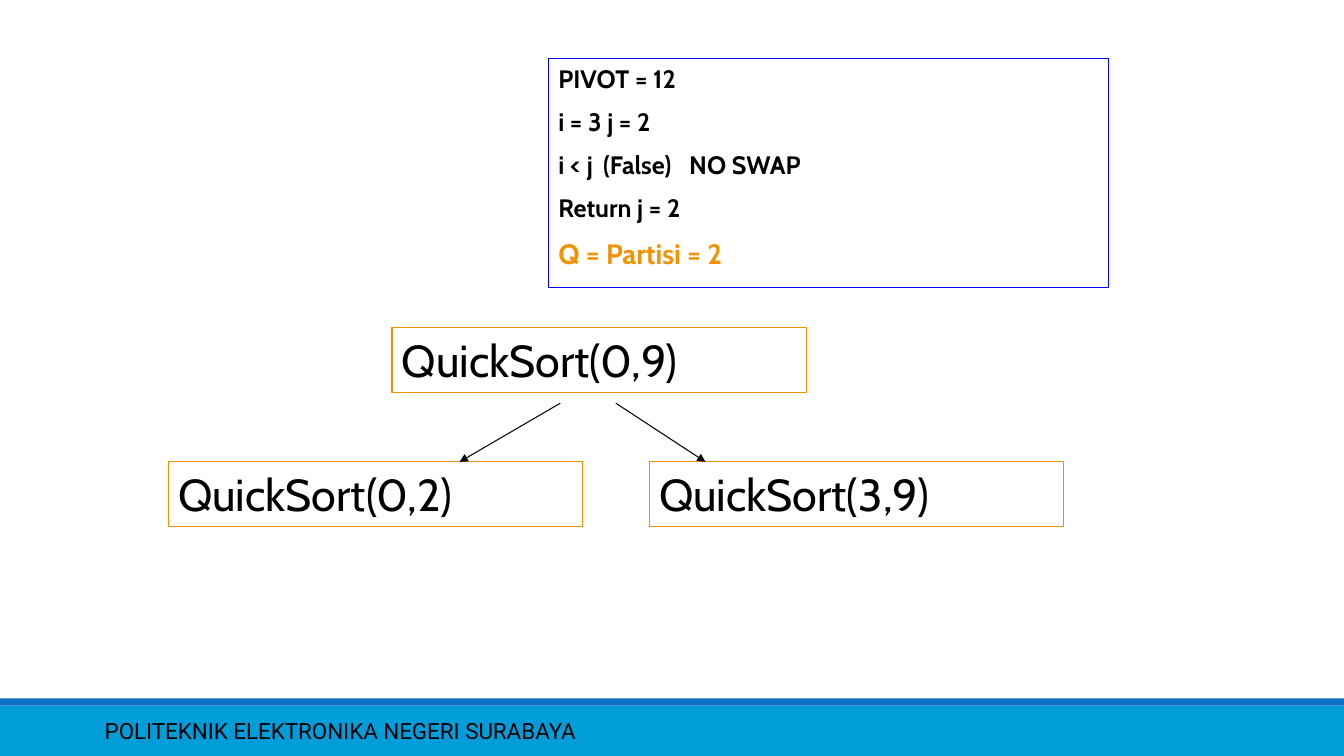
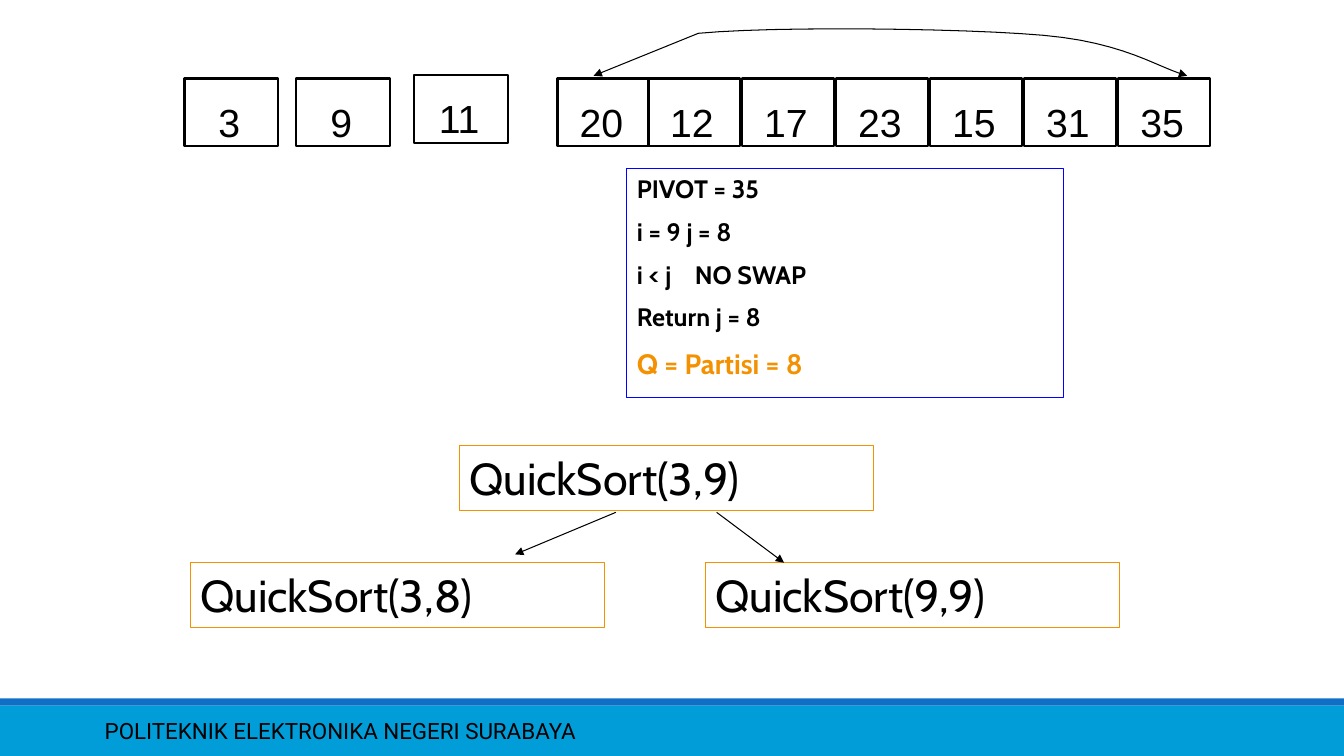
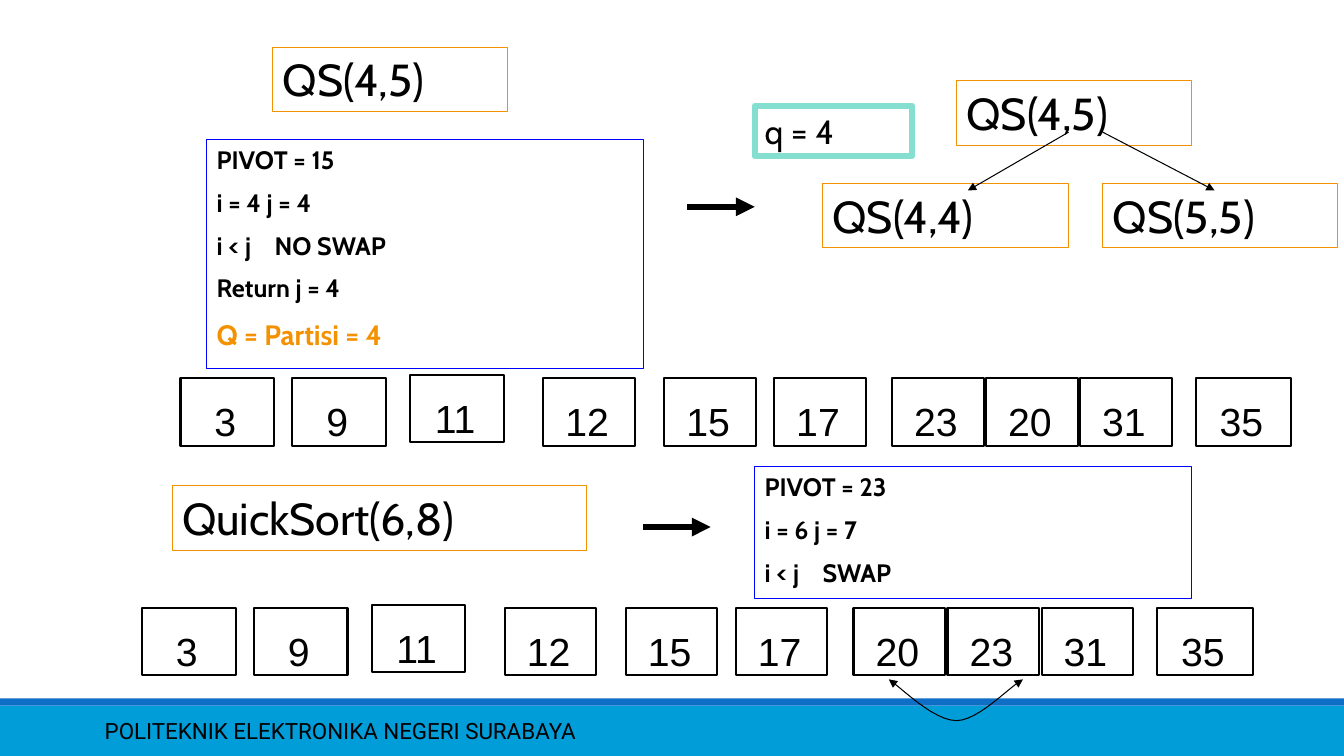
import lxml.etree
import pptx
import pptx.dml.color
import pptx.enum.shapes
import pptx.enum.text
import pptx.oxml.ns
import pptx.util

Cm = pptx.util.Cm
Pt = pptx.util.Pt
RGBColor = pptx.dml.color.RGBColor
Anchor = pptx.enum.text.MSO_ANCHOR
Align = pptx.enum.text.PP_ALIGN
qn = pptx.oxml.ns.qn

BLACK = RGBColor(0x00, 0x00, 0x00)
BLUE = RGBColor(0x00, 0x00, 0xFF)
ORANGE = RGBColor(0xF4, 0x91, 0x00)
MINT = RGBColor(0x85, 0xDF, 0xD0)
BAND = RGBColor(0x00, 0x9D, 0xD9)
BAND_EDGE = RGBColor(0x0F, 0x6F, 0xC6)

SLIDE_WIDTH = 33.87
SLIDE_HEIGHT = 19.05
CALL_WIDTH = 10.44
SHORT_CALL_WIDTH = 5.92
CALL_HEIGHT = 1.63
CELL_PITCH = 2.37
JOINED_OFFSETS = [0, 2.82, 5.79, 9.4] + [11.68 + CELL_PITCH * index for index in range(6)]
SPLIT_OFFSETS = (
    [0, 2.82, 5.79, 9.14, 12.19, 14.96]
    + [17.93 + CELL_PITCH * index for index in range(3)]
    + [25.58]
)
SWAP_TABS = [1.46]
CURVE_STEPS = 12


def add_text(text_frame, text, size=18, font="Cabin", color=BLACK, bold=False,
             align=Align.LEFT, space_before=0, tabs=()):
    first = text_frame.paragraphs[0]
    paragraph = text_frame.add_paragraph() if first.runs else first
    if tabs:
        properties = paragraph._p.get_or_add_pPr()
        tab_list = lxml.etree.SubElement(properties, qn("a:tabLst"))
        for position in tabs:
            lxml.etree.SubElement(tab_list, qn("a:tab"), pos=str(Cm(position)), algn="l")
    paragraph.alignment = align
    paragraph.space_before = Pt(space_before)
    run = paragraph.add_run()
    run.text = text
    run.font.size = Pt(size)
    run.font.name = font
    run.font.bold = bold
    run.font.color.rgb = color


def add_box(slide, left, top, width, height, fill=None, line=None, line_width=0.75,
            anchor=Anchor.TOP):
    shape = slide.shapes.add_shape(
        pptx.enum.shapes.MSO_SHAPE.RECTANGLE, Cm(left), Cm(top), Cm(width), Cm(height))
    shape.shadow.inherit = False
    if fill is None:
        shape.fill.background()
    else:
        shape.fill.solid()
        shape.fill.fore_color.rgb = fill
    if line is None:
        shape.line.fill.background()
    else:
        shape.line.color.rgb = line
        shape.line.width = Pt(line_width)
    shape.text_frame.word_wrap = True
    shape.text_frame.vertical_anchor = anchor
    return shape


def format_arrow(shape, line_width, ends):
    shape.line.color.rgb = BLACK
    shape.line.width = Pt(line_width)
    for end in ends:
        lxml.etree.SubElement(shape.line._get_or_add_ln(), qn(end), type="triangle")


def add_arrow(slide, start_x, start_y, end_x, end_y, line_width=0.75):
    connector = slide.shapes.add_connector(
        pptx.enum.shapes.MSO_CONNECTOR.STRAIGHT,
        Cm(start_x), Cm(start_y), Cm(end_x), Cm(end_y))
    format_arrow(connector, line_width, ["a:tailEnd"])
    lxml.etree.SubElement(connector._element.spPr, qn("a:effectLst"))


def curve_points(start, control_1, control_2, end):
    for step in range(1, CURVE_STEPS + 1):
        t = step / CURVE_STEPS
        weights = ((1 - t) ** 3, 3 * t * (1 - t) ** 2, 3 * t ** 2 * (1 - t), t ** 3)
        knots = (start, control_1, control_2, end)
        yield tuple(sum(w * knot[axis] for w, knot in zip(weights, knots)) for axis in (0, 1))


def add_swap_arrow(slide, left, top, segments):
    points = [(0, 0)]
    for segment in segments:
        points.extend([segment] if len(segment) == 2 else curve_points(points[-1], *segment))
    vertices = [(Cm(left + x), Cm(top + y)) for x, y in points]
    builder = slide.shapes.build_freeform(*vertices[0])
    builder.add_line_segments(vertices[1:], close=False)
    shape = builder.convert_to_shape()
    shape.shadow.inherit = False
    shape.fill.background()
    format_arrow(shape, 0.75, ["a:headEnd", "a:tailEnd"])


def add_call(slide, left, top, text, width=CALL_WIDTH):
    shape = add_box(slide, left, top, width, CALL_HEIGHT, line=ORANGE)
    add_text(shape.text_frame, text, size=32)


def add_call_tree(slide, left, top, calls, arrows):
    for text, x, y, width in calls:
        add_call(slide, left + x, top + y, text, width)
    for start_x, start_y, end_x, end_y in arrows:
        add_arrow(slide, left + start_x, top + start_y, left + end_x, top + end_y)


def add_trace(slide, left, top, steps, result=None, width=11, height=5.77, tabs=SWAP_TABS):
    text_frame = add_box(slide, left, top, width, height, line=BLUE).text_frame
    for index, step in enumerate(steps):
        add_text(text_frame, step, bold=True, space_before=9 if index else 0,
                 tabs=tabs if "\t" in step else ())
    if result:
        add_text(text_frame, result, size=20, color=ORANGE, bold=True, space_before=10)


def add_number_row(slide, left, top, numbers, offsets, last_width=2.31):
    widths = [2.36] * 3 + [2.31] * 6 + [last_width]
    for index, (number, offset, width) in enumerate(zip(numbers, offsets, widths)):
        raised = 0.08 if index == 2 else 0
        cell = add_box(slide, left + offset, top - raised, width, 1.7, line=BLACK,
                       line_width=1.5, anchor=Anchor.MIDDLE)
        text_frame = cell.text_frame
        text_frame.margin_left = text_frame.margin_bottom = 0
        text_frame.margin_right = Cm(0.1)
        text_frame.margin_top = Cm(0.46)
        add_text(text_frame, str(number), size=28, font="Arial", align=Align.CENTER)


def add_footer(slide, layout):
    for placeholder in list(layout.placeholders):
        placeholder.element.getparent().remove(placeholder.element)
    band = add_box(slide, 0, 17.78, SLIDE_WIDTH, 1.27, fill=BAND)
    edge = add_box(slide, 0, 17.6, SLIDE_WIDTH, 0.18, fill=BAND_EDGE)
    label = slide.shapes.add_textbox(Cm(2.39), Cm(17.91), Cm(21.36), Cm(1.02))
    label.text_frame.word_wrap = True
    label.text_frame.vertical_anchor = Anchor.MIDDLE
    add_text(label.text_frame, "POLITEKNIK ELEKTRONIKA NEGERI SURABAYA", size=16, font="Roboto")
    for shape in (band, edge, label):
        layout.shapes.element.append(shape.element)


def build_first_partition(slide):
    add_trace(slide, 13.82, 1.47,
              ["PIVOT = 12", "i = 3 j = 2", "i < j\t(False)\tNO SWAP", "Return j = 2"],
              "Q = Partisi = 2", width=14.12, tabs=[1.13, 3.3])
    add_call_tree(
        slide, 4.24, 8.26,
        [("QuickSort(0,9)", 5.64, 0, CALL_WIDTH),
         ("QuickSort(3,9)", 12.12, 3.38, CALL_WIDTH),
         ("QuickSort(0,2)", 0, 3.38, CALL_WIDTH)],
        [(9.88, 1.9, 7.34, 3.38), (11.28, 1.9, 13.54, 3.38)])


def build_second_partition(slide):
    add_number_row(slide, 4.65, 1.98, [3, 9, 11, 20, 12, 17, 23, 15, 31, 35], JOINED_OFFSETS)
    add_swap_arrow(slide, 14.96, 1.91, [
        (2.64, -1.07),
        ((4.52, -1.25), (9.27, -1.2), (11.33, -1.02)),
        ((13.39, -0.84), (14.2, -0.21), (14.96, 0))])
    add_trace(slide, 15.8, 4.24,
              ["PIVOT = 35", "i = 9 j = 8", "i < j\tNO SWAP", "Return j = 8"],
              "Q = Partisi = 8")
    add_call_tree(
        slide, 4.8, 11.23,
        [("QuickSort(3,9)", 6.78, 0, CALL_WIDTH),
         ("QuickSort(3,8)", 0, 2.95, CALL_WIDTH),
         ("QuickSort(9,9)", 12.98, 2.95, CALL_WIDTH)],
        [(10.72, 1.68, 8.18, 2.74), (13.26, 1.68, 14.96, 2.95)])


def build_last_partitions(slide):
    add_call(slide, 6.88, 1.19, "QS(4,5)", SHORT_CALL_WIDTH)
    add_trace(slide, 5.21, 3.51,
              ["PIVOT = 15", "i = 4 j = 4", "i < j\tNO SWAP", "Return j = 4"],
              "Q = Partisi = 4")
    add_call_tree(
        slide, 20.73, 2.03,
        [("QS(4,5)", 3.38, 0, SHORT_CALL_WIDTH),
         ("QS(5,5)", 7.06, 2.59, SHORT_CALL_WIDTH),
         ("QS(4,4)", 0, 2.59, 6.2)],
        [(6.2, 1.3, 3.66, 2.77), (7.06, 1.3, 9.88, 2.77)])
    split_point = add_box(slide, 19.02, 2.67, 3.96, 1.27, line=MINT, line_width=4.5)
    add_text(split_point.text_frame, "q = 4", size=24)
    add_arrow(slide, 17.32, 5.21, 19.02, 5.21, line_width=4.5)
    add_number_row(slide, 4.55, 9.53, [3, 9, 11, 12, 15, 17, 23, 20, 31, 35],
                   SPLIT_OFFSETS, last_width=2.41)
    add_call(slide, 4.34, 12.24, "QuickSort(6,8)")
    add_trace(slide, 19.02, 11.76, ["PIVOT = 23", "i = 6 j = 7", "i < j\tSWAP"], height=3.33)
    add_arrow(slide, 16.21, 13.28, 17.91, 13.28, line_width=4.5)
    add_number_row(slide, 3.58, 15.32, [3, 9, 11, 12, 15, 17, 20, 23, 31, 35],
                   SPLIT_OFFSETS, last_width=2.41)
    add_swap_arrow(slide, 22.4, 17.12, [
        ((0.28, 0.18), (1.12, 1.04), (1.7, 1.04)),
        ((2.26, 1.04), (3.02, 0.2), (3.38, 0))])


def main():
    presentation = pptx.Presentation()
    presentation.slide_width = Cm(SLIDE_WIDTH)
    presentation.slide_height = Cm(SLIDE_HEIGHT)
    layout = presentation.slide_layouts.get_by_name("Blank")
    builders = [build_first_partition, build_second_partition, build_last_partitions]
    slides = [presentation.slides.add_slide(layout) for _ in builders]
    add_footer(slides[0], layout)
    for slide, build in zip(slides, builders):
        build(slide)
    presentation.save("out.pptx")


if __name__ == "__main__":
    main()
